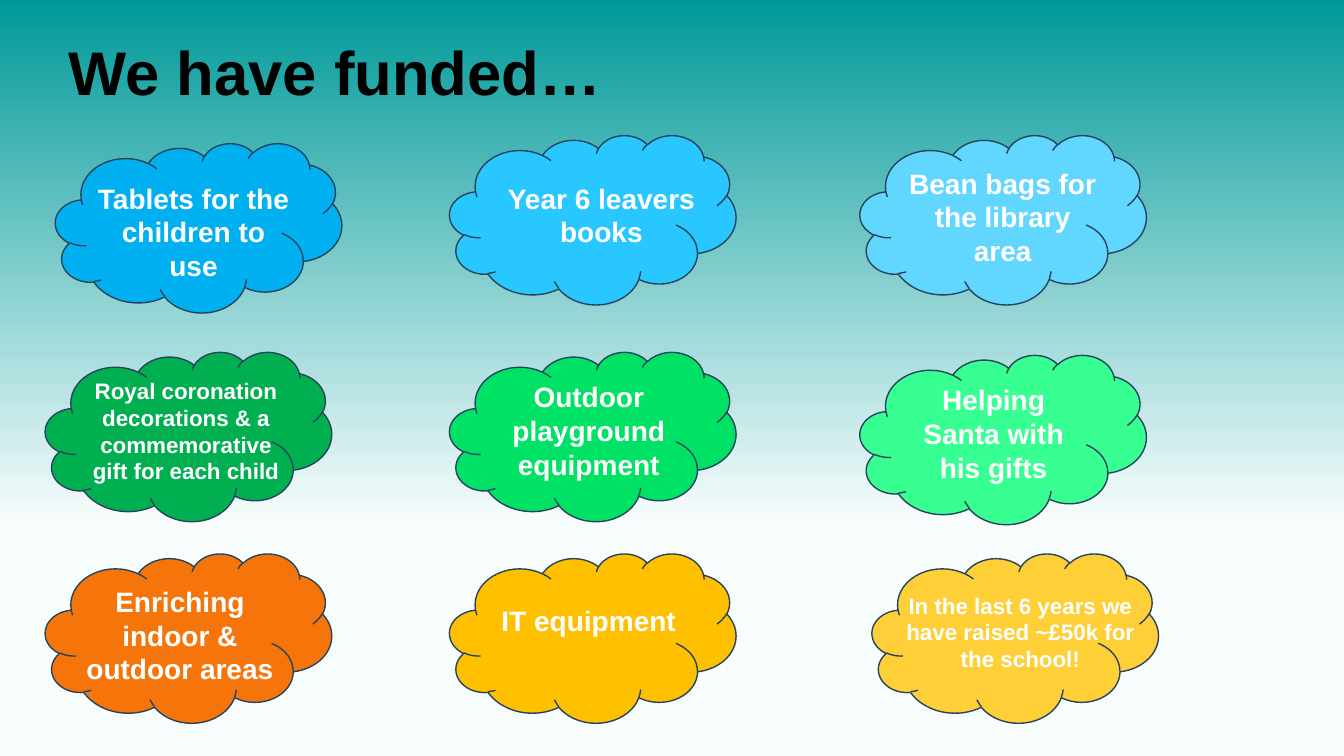
"""Build a slide of nine clouds naming what has been funded."""
import pptx
import pptx.dml.color
import pptx.enum.shapes
import pptx.enum.text
import pptx.util

Inches = pptx.util.Inches
Pt = pptx.util.Pt
RGB = pptx.dml.color.RGBColor.from_string

COLORS = {
    "teal": "009999", "mist": "F7FDFC", "black": "000000", "white": "FFFFFF",
    "outline": "28445D",
    "blue": "00B0F0", "sky": "29C7FF", "pale blue": "61D6FF",
    "green": "00B050", "bright green": "00E266", "mint": "37FF91",
    "orange": "F5750B", "gold": "FFC000", "yellow": "FFCF37",
}
CLOUD_W, CLOUD_H = 2.84, 1.68


def add_text(text, left, top, width, height, size, color):
    """Add a wrapped bold Arial text box and return its frame."""
    tf = s.shapes.add_textbox(Inches(left), Inches(top), Inches(width), Inches(height)).text_frame
    tf.word_wrap = True
    p = tf.paragraphs[0]
    p.text = text
    p.font.name = "Arial"
    p.font.size = Pt(size)
    p.font.bold = True
    p.font.color.rgb = RGB(COLORS[color])
    return tf


prs = pptx.Presentation()
prs.slide_width = Inches(13.33)
prs.slide_height = Inches(7.5)
s = prs.slides.add_slide(prs.slide_layouts[6])

bg = s.background.fill
bg.gradient()
bg.gradient_angle = 270
for stop, color, position in zip(bg.gradient_stops, ("teal", "mist"), (0, 0.69)):
    stop.color.rgb = RGB(COLORS[color])
    stop.position = position

title = add_text("We have funded…", 0.58, 0.02, 12.2, 1.45, 44, "black")
title.vertical_anchor = pptx.enum.text.MSO_ANCHOR.MIDDLE
title.paragraphs[0].line_spacing = 0.9

funded = [
    ("blue", (0.55, 1.42), "Tablets for the children to use", (0.85, 1.75, 2.14, 1.11), 20),
    ("sky", (4.46, 1.34), "Year 6 leavers books", (4.82, 1.75, 2.29, 0.77), 20),
    ("pale blue", (8.53, 1.34), "Bean bags for the library area", (8.87, 1.6, 2.15, 1.11), 20),
    ("green", (0.45, 3.49), "Royal coronation decorations & a commemorative gift for each child",
     (0.78, 3.69, 2.13, 1.18), 16),
    ("bright green", (4.46, 3.49), "Outdoor playground equipment", (4.95, 3.72, 1.78, 1.11), 20),
    ("mint", (8.53, 3.52), "Helping Santa with his gifts", (8.87, 3.75, 1.97, 1.11), 20),
    ("orange", (0.45, 5.49), "Enriching indoor & outdoor areas", (0.61, 5.75, 2.35, 1.11), 20),
    ("gold", (4.46, 5.49), "IT equipment", (4.81, 5.94, 2.06, 0.44), 20),
    ("yellow", (8.65, 5.49), "In the last 6 years we have raised ~£50k for the school!",
     (8.87, 5.82, 2.5, 0.91), 16),
]
for color, (left, top), text, box, size in funded:
    sp = s.shapes.add_shape(pptx.enum.shapes.MSO_SHAPE.CLOUD, Inches(left), Inches(top),
                            Inches(CLOUD_W), Inches(CLOUD_H))
    sp.shadow.inherit = False
    sp.fill.solid()
    sp.fill.fore_color.rgb = RGB(COLORS[color])
    sp.line.color.rgb = RGB(COLORS["outline"])
    sp.line.width = Pt(1)
    tf = add_text(text, *box, size, "white")
    tf.auto_size = pptx.enum.text.MSO_AUTO_SIZE.SHAPE_TO_FIT_TEXT
    tf.paragraphs[0].alignment = pptx.enum.text.PP_ALIGN.CENTER

prs.save("out.pptx")
